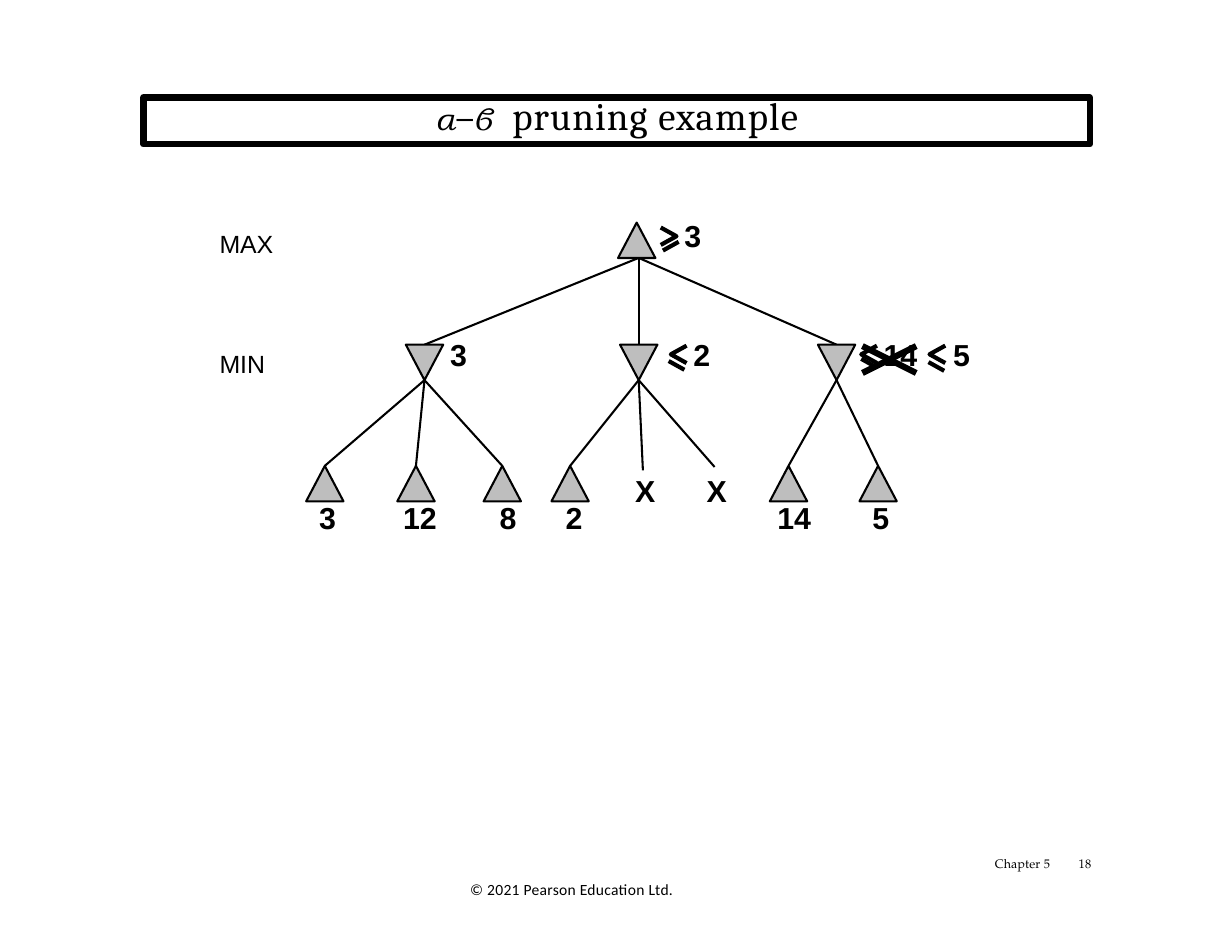
from lxml import etree
from pptx import Presentation
from pptx.dml.color import RGBColor
from pptx.enum.shapes import MSO_CONNECTOR, MSO_SHAPE
from pptx.enum.text import PP_ALIGN
from pptx.oxml.ns import qn
from pptx.util import Pt

STRAIGHT = MSO_CONNECTOR.STRAIGHT
UPWARD = MSO_SHAPE.ISOSCELES_TRIANGLE
DOWNWARD = MSO_SHAPE.FLOWCHART_MERGE
CENTER = PP_ALIGN.CENTER

COLORS = {"ink": "000000", "node": "BEBEBE"}
NODE_WIDTH, NODE_HEIGHT = 24, 22.8
MAX_TOP, MIN_TOP, LEAF_TOP = 143.1, 221.6, 299.5
EDGE_WIDTH, SIGN_WIDTH, CROSS_WIDTH = 1.34, 2.68, 4
ROOT_FOOT = (410.6, 165.8)
MIN_NODES = {
    272.9: [(208.8, LEAF_TOP), (267.4, LEAF_TOP), (322.9, LEAF_TOP)],
    410.6: [(366.5, LEAF_TOP), (413.3, 302.4), (459.4, 300.2)],
    537.8: [(506.9, LEAF_TOP), (564.5, LEAF_TOP)],
}
VALUES = [
    ("3", 439.2, 138.2, 14, []),
    ("3", 288.7, 214.6, 14, []),
    ("2", 445, 214.6, 14, []),
    ("14\t5", 567.4, 214.6, 58, [44.6]),
    ("3", 204.5, 319, 14, []),
    ("12\t8\t2", 258.5, 319, 118, [61.9, 104.4]),
    ("X\tX", 407.5, 301.7, 62, [46.1]),
    ("14\t5", 499, 319, 75, [61.2]),
]


def color(name):
    """Return the named colour."""
    return RGBColor.from_string(COLORS[name])


def set_line(line, width):
    """Give a line the ink colour and a width."""
    line.color.rgb = color("ink")
    line.width = Pt(width)


def add_text(slide, place, spans, insets=(0.7, 1.6), tabs=(), spacing=None, align=None):
    """Add a text box of (text, size, font, letter spacing, style) spans."""
    box = slide.shapes.add_textbox(*(Pt(length) for length in place))
    frame = box.text_frame
    frame.word_wrap = True
    frame.margin_left, frame.margin_top = (Pt(inset) for inset in insets)
    frame.margin_right = frame.margin_bottom = 0
    para = frame.paragraphs[0]
    para.alignment = align
    if spacing:
        para.line_spacing = Pt(spacing)
    if tabs:
        stops = etree.SubElement(para._p.get_or_add_pPr(), qn("a:tabLst"))
        for position in tabs:
            etree.SubElement(stops, qn("a:tab"), pos=str(Pt(position)), algn="l")
    for text, size, font, gap, style in spans:
        span = para.add_run()
        span.text = text
        span.font.size = Pt(size)
        span.font.name = font
        span.font.bold = style == "bold"
        span.font.italic = style == "italic"
        span.font.color.rgb = color("ink")
        span._r.get_or_add_rPr().set("spc", str(round(gap * 100)))
    return box


def add_node(slide, kind, center, top):
    """Add a game-tree triangle centred on a horizontal position."""
    node = slide.shapes.add_shape(
        kind, Pt(center - NODE_WIDTH / 2), Pt(top), Pt(NODE_WIDTH), Pt(NODE_HEIGHT)
    )
    node.shadow.inherit = False
    node.fill.solid()
    node.fill.fore_color.rgb = color("node")
    set_line(node.line, EDGE_WIDTH)


def add_edge(slide, start, end, width=EDGE_WIDTH):
    """Add a straight line between two points."""
    edge = slide.shapes.add_connector(STRAIGHT, *(Pt(value) for value in (*start, *end)))
    set_line(edge.line, width)
    etree.SubElement(edge._element.spPr, qn("a:effectLst"))


def add_sign(slide, x, y, direction, bar):
    """Add a slanted inequality sign with its tip at x, y."""
    reach, rise = 10.1 * direction, 5.6
    bar_x, bar_y = x + bar[0] * direction, y + bar[1]
    builder = slide.shapes.build_freeform(Pt(x + reach), Pt(y - rise))
    builder.add_line_segments([(Pt(x), Pt(y)), (Pt(x + reach), Pt(y + rise))], close=False)
    builder.move_to(Pt(bar_x), Pt(bar_y))
    builder.add_line_segments([(Pt(bar_x + reach), Pt(bar_y + rise))], close=False)
    sign = builder.convert_to_shape()
    sign.shadow.inherit = False
    sign.fill.background()
    set_line(sign.line, SIGN_WIDTH)


def add_title(slide):
    """Add the framed title."""
    spans = [
        ("α", 20.5, "TeX Gyre Bonum", -0.3, "italic"),
        ("–", 25, "Cambria", -0.3, None),
        ("β\t", 20.5, "TeX Gyre Bonum", -0.3, "italic"),
        ("pruning ", 25, "Cambria", 0.7, None),
        ("example", 25, "Cambria", 0.8, None),
    ]
    title = add_text(slide, (92.2, 62.6, 608.4, 30.2), spans, (0, 0), [49.7], 26.4, CENTER)
    set_line(title.line, 4.08)


def add_tree(slide):
    """Add the nodes and edges of the game tree."""
    for center, children in MIN_NODES.items():
        add_edge(slide, ROOT_FOOT, (center, MIN_TOP))
        for child in children:
            add_edge(slide, (center, MIN_TOP + NODE_HEIGHT), child)
            if child[1] == LEAF_TOP:
                add_node(slide, UPWARD, *child)
        add_node(slide, DOWNWARD, center, MIN_TOP)
    add_node(slide, UPWARD, 409.3, MAX_TOP)


def add_labels(slide):
    """Add the level names, node values and bound signs."""
    for name, top in (("MAX", 145.4), ("MIN", 222.5)):
        add_text(slide, (140.4, top, 40, 21.6), [(name, 16, "Arial", 0, None)])
    for text, left, top, width, tabs in VALUES:
        spans = [(text, 19.5, "Arial", -0.1, "bold")]
        add_text(slide, (left, top, width, 25.2), spans, tabs=tabs)
    add_sign(slide, 434.9, 151.9, -1, (-1.4, 3.6))
    add_sign(slide, 431.3, 227.8, 1, (-1.4, 4.3))
    add_sign(slide, 553.7, 227.8, 1, (0, 2.9))
    add_sign(slide, 597.6, 227.8, 1, (-0.7, 5))
    for start, end in ((239.8, 222.5), (222.5, 239.8)):
        add_edge(slide, (554.4, start), (589, end), CROSS_WIDTH)


def add_footer(slide):
    """Add the chapter, page number and copyright line."""
    font = "TeX Gyre Pagella"
    chapter = [("Chapter ", 8, font, 0.1, None), ("5", 8, font, 0.2, None)]
    add_text(slide, (638.6, 551.5, 40, 9.4), chapter, (0.9, 0), spacing=8.6)
    number = [("18", 8, font, 0.2, None)]
    add_text(slide, (690.5, 551.5, 15.1, 10.1), number, (2.9, 0), spacing=8.6)
    notice = [("© 2021 Pearson Education Ltd.", 10, "Calibri", 0.2, None)]
    add_text(slide, (295.2, 562.3, 270, 31.7), notice, (7.2, 3.6))


def main():
    """Build and save the slide."""
    deck = Presentation()
    deck.slide_width, deck.slide_height = Pt(792), Pt(612)
    page = deck.slides.add_slide(deck.slide_layouts[6])
    add_title(page)
    add_tree(page)
    add_labels(page)
    add_footer(page)
    deck.save("out.pptx")


if __name__ == "__main__":
    main()
